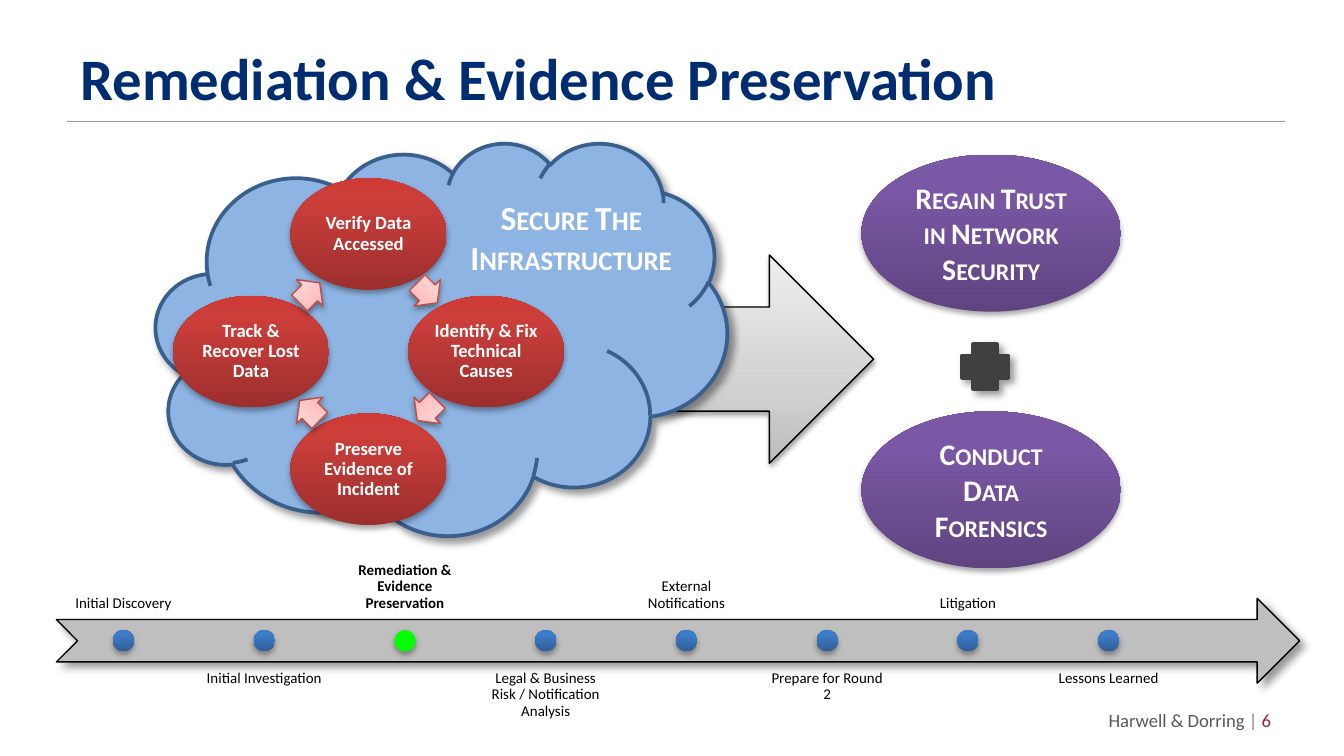
"""Build the remediation and evidence preservation slide."""
from copy import deepcopy
from math import cos, radians, sin

from lxml import etree
from pptx import Presentation
from pptx.dml import color
from pptx.enum import shapes, text
from pptx.oxml import ns
from pptx.util import Pt

FONT = "Calibri"
TITLE = "Remediation & Evidence Preservation"
FOOTER = [("Harwell & Dorring ", "595959"), ("| ", "808080"), ("6", "9D2235")]
STAGES = [
    "Initial Discovery", "Initial Investigation", "Remediation & Evidence Preservation",
    "Legal & Business Risk / Notification Analysis", "External Notifications",
    "Prepare for Round 2", "Litigation", "Lessons Learned",
]
CURRENT_STAGE = 2
CYCLE = [
    "Verify Data Accessed", "Identify & Fix Technical Causes",
    "Preserve Evidence of Incident", "Track & Recover Lost Data",
]
CLOUD_LABEL = "Secure The Infrastructure"
OUTCOMES = [("Regain Trust in Network Security", 82.8), ("Conduct Data Forensics", 220.4)]

BLUE = [(0, "2F5F99"), (0.8, "3D7CC7"), (1, "3A7CCB")]
RED = [(0, "9C2F2D"), (0.8, "CB3E3A"), (1, "CE3B37")]
PINK = [(0, "FFA6A5"), (0.35, "FFC0BF"), (1, "FFE7E7")]
PURPLE = [(0, "5F4480"), (0.8, "7B58A6"), (1, "7C57A8")]
GRAY = [(0, "BDBDBD"), (0.35, "D1D1D1"), (1, "EEEEEE")]
DIAGONAL = (40, 4, 3, 45)
BELOW = (35, 3.1, 1.8, 90)
BELOW_ARROW = (38, 3.1, 1.6, 90)

KIND = shapes.MSO_SHAPE
MIDDLE, TOP, BOTTOM = text.MSO_ANCHOR.MIDDLE, text.MSO_ANCHOR.TOP, text.MSO_ANCHOR.BOTTOM
LEFT, CENTER, RIGHT = text.PP_ALIGN.LEFT, text.PP_ALIGN.CENTER, text.PP_ALIGN.RIGHT

deck = Presentation()
deck.slide_width, deck.slide_height = Pt(720), Pt(405)
slide = deck.slides.add_slide(deck.slide_layouts[6])


def rgb(value):
    """Turn a hex string into a colour."""
    return color.RGBColor.from_string(value)


def around(x, y, width, height):
    """Return the box centred on a point."""
    return x - width / 2, y - height / 2, width, height


def add_shadow(shape, opacity, blur, distance, angle):
    """Give a shape a black outer shadow."""
    shape.shadow.inherit = False
    effects = shape._element.spPr.find(ns.qn("a:effectLst"))
    outer = etree.SubElement(
        effects, ns.qn("a:outerShdw"), blurRad=str(Pt(blur)), dist=str(Pt(distance)),
        dir=str(angle * 60000), rotWithShape="0")
    black = etree.SubElement(outer, ns.qn("a:srgbClr"), val="000000")
    etree.SubElement(black, ns.qn("a:alpha"), val=str(opacity * 1000))


def add_figure(kind, box, fill, shadow, line=None, weight=0.75):
    """Add a preset shape with a flat fill or an upward gradient."""
    figure = slide.shapes.add_shape(kind, *map(Pt, box))
    if isinstance(fill, str):
        figure.fill.solid()
        figure.fill.fore_color.rgb = rgb(fill)
    else:
        figure.fill.gradient()
        figure.fill.gradient_angle = 90
        stops = figure._element.spPr.find(".//" + ns.qn("a:gsLst"))
        stops.append(deepcopy(stops[-1]))
        for stop, (position, shade) in zip(figure.fill.gradient_stops, fill):
            stop.position, stop.color.rgb = position, rgb(shade)
    if line:
        figure.line.color.rgb, figure.line.width = rgb(line), Pt(weight)
    else:
        figure.line.fill.background()
    add_shadow(figure, *shadow)
    return figure


def write(holder, runs, size, bold=False, align=CENTER, anchor=MIDDLE,
          inset=None, spacing=None, small_caps=False):
    """Write one paragraph of (words, colour) runs into a shape or box."""
    frame = holder.text_frame
    frame.word_wrap, frame.vertical_anchor = True, anchor
    if inset is not None:
        frame.margin_left = frame.margin_right = Pt(inset)
        frame.margin_top = frame.margin_bottom = Pt(inset)
    paragraph = frame.paragraphs[0]
    paragraph.alignment = align
    if spacing:
        paragraph.line_spacing = spacing
    font = paragraph.font
    font.name, font.size, font.bold = FONT, Pt(size), bold
    if small_caps:
        font._element.set("cap", "small")
    for words, shade in runs:
        run = paragraph.add_run()
        run.text = words
        run.font.color.rgb = rgb(shade)


def add_label(box, runs, size, **style):
    """Add a text box."""
    write(slide.shapes.add_textbox(*map(Pt, box)), runs, size, **style)


def add_heading():
    """Add the title, its rule and the footer."""
    rule = slide.shapes.add_connector(
        shapes.MSO_CONNECTOR.STRAIGHT, Pt(36), Pt(65), Pt(688.5), Pt(65))
    rule.line.color.rgb, rule.line.width = rgb("9D968D"), Pt(0.75)
    etree.SubElement(rule._element.spPr, ns.qn("a:effectLst"))
    add_label((36, 16.6, 654, 49), [(TITLE, "002D72")], 31.5, bold=True, align=LEFT)
    add_label((520, 376, 168, 19.4), FOOTER, 10, align=RIGHT)


def add_timeline():
    """Add the arrow with stages labelled above and below in turn."""
    first, step, middle = 66.2, 75.4, 343.3
    add_figure(KIND.NOTCHED_RIGHT_ARROW, (30.2, 320.6, 666, 45.4), "BFBFBF", DIAGONAL, "000000")
    for index, stage in enumerate(STAGES):
        x = first + index * step
        current = index == CURRENT_STAGE
        y, anchor = (355, TOP) if index % 2 else (286.6, BOTTOM)
        add_label((x - 36, y, 72, 45.4), [(stage, "000000")], 8, bold=current,
                  anchor=anchor, inset=4.5, spacing=0.9)
        add_figure(KIND.OVAL, around(x, middle, 11.4, 11.4),
                   "00FF00" if current else BLUE, BELOW)


def add_cycle():
    """Add the ring of steps, each followed by an arrow to the next."""
    x, y, radius = 197.4, 188.4, 63
    for index, step in enumerate(CYCLE):
        angle = radians(index * 90 - 90)
        oval = add_figure(KIND.OVAL, around(x + radius * cos(angle), y + radius * sin(angle),
                                            83.6, 59.8), RED, BELOW)
        write(oval, [(step, "FFFFFF")], 10, bold=True, inset=0.9, spacing=0.9)
        turn = index * 90 + 45
        diagonal, reach = radians(turn - 90), radius / 2 ** 0.5
        arrow = add_figure(KIND.RIGHT_ARROW,
                           around(x + reach * cos(diagonal), y + reach * sin(diagonal), 15.2, 20),
                           PINK, BELOW_ARROW, "BF4C48")
        arrow.adjustments[0] = 0.6
        arrow.rotation = turn


def add_outcomes():
    """Add the two outcomes joined by a plus."""
    for outcome, y in OUTCOMES:
        oval = add_figure(KIND.OVAL, (461.5, y, 139, 84.2), PURPLE, BELOW)
        write(oval, [(outcome, "FFFFFF")], 16, bold=True, small_caps=True)
    add_figure(KIND.CROSS, (515.5, 184.5, 24.5, 23.8), "404040", DIAGONAL, "404040", 2)


add_heading()
add_timeline()
add_figure(KIND.RIGHT_ARROW, (348.5, 136.6, 119.5, 111.6), GRAY, BELOW_ARROW, "000000")
add_figure(KIND.CLOUD, (83.5, 76.3, 306, 210.2), "8EB4E3", DIAGONAL, "3A5F8C", 2)
add_cycle()
add_outcomes()
add_label((209.5, 88.6, 193, 77), [(CLOUD_LABEL, "FFFFFF")], 18, bold=True, small_caps=True)
deck.save("out.pptx")
